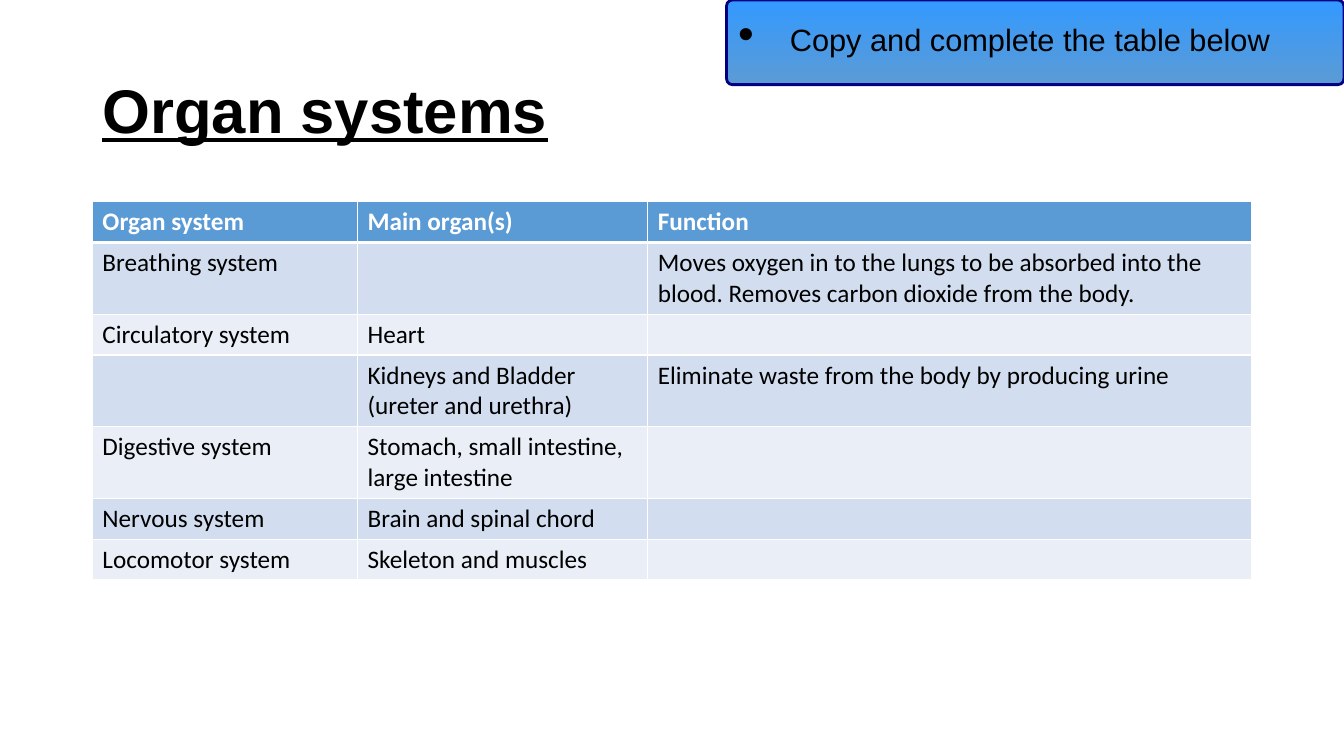
from lxml.etree import SubElement
from pptx import Presentation
from pptx.dml.color import RGBColor
from pptx.enum.shapes import MSO_SHAPE
from pptx.enum.text import MSO_ANCHOR, PP_ALIGN
from pptx.oxml.ns import qn
from pptx.util import Pt

# Content
HEADING = "Organ systems"
TASK = "Copy and complete the table below"
SYSTEMS = [
    ("Organ system", "Main organ(s)", "Function"),
    ("Breathing system", "", "Moves oxygen in to the lungs to be absorbed into the blood. "
                             "Removes carbon dioxide from the body."),
    ("Circulatory system", "Heart", ""),
    ("", "Kidneys and Bladder (ureter and urethra)",
     "Eliminate waste from the body by producing urine"),
    ("Digestive system", "Stomach, small intestine, large intestine", ""),
    ("Nervous system", "Brain and spinal chord", ""),
    ("Locomotor system", "Skeleton and muscles", ""),
]

# Colours
BLACK = RGBColor(0x00, 0x00, 0x00)
WHITE = RGBColor(0xFF, 0xFF, 0xFF)
HEADER_BLUE = RGBColor(0x5B, 0x9B, 0xD5)
BAND_DARK = RGBColor(0xD2, 0xDE, 0xEF)
BAND_LIGHT = RGBColor(0xEA, 0xEF, 0xF7)
TASK_BLUE = RGBColor(0x33, 0x99, 0xFF)
NAVY = RGBColor(0x00, 0x00, 0x80)

# Layout, in points
SLIDE_WIDTH, SLIDE_HEIGHT = 960, 540
MARGIN = 66
COLUMN_WIDTHS = (189.4, 207.4, 431.2)
ROW_HEIGHT = 29.2
TASK_LEFT, TASK_HEIGHT = 519, 60.5
TASK_INDENT = 28

# Text formats
HEADING_FONT = dict(name="Arial", size=Pt(44), bold=True, underline=True)
BULLET_FONT = dict(name="Arial", size=Pt(32), bold=True)
TASK_FONT = dict(name="Arial", size=Pt(22), bold=False)
HEADER_FONT = dict(name="Calibri", size=Pt(18), bold=True)
BODY_FONT = dict(name="Calibri", size=Pt(18), bold=False)


def add_text(paragraph, text, font_format, color=BLACK):
    run = paragraph.add_run()
    run.text = text
    for key, value in font_format.items():
        setattr(run.font, key, value)
    run.font.color.rgb = color


def add_borders(cell, widths):
    properties = cell._tc.get_or_add_tcPr()
    for side, width in widths.items():
        border = SubElement(properties, qn(f"a:ln{side}"), w=str(Pt(width)))
        fill = SubElement(border, qn("a:solidFill"))
        SubElement(fill, qn("a:srgbClr"), val=str(WHITE))


presentation = Presentation()
presentation.slide_width = Pt(SLIDE_WIDTH)
presentation.slide_height = Pt(SLIDE_HEIGHT)
slide = presentation.slides.add_slide(presentation.slide_layouts[5])

# Heading
heading = slide.shapes.title
heading.left, heading.top = Pt(MARGIN), Pt(28.8)
heading.width, heading.height = Pt(sum(COLUMN_WIDTHS)), Pt(104.4)
heading.text_frame.vertical_anchor = MSO_ANCHOR.MIDDLE
heading_line = heading.text_frame.paragraphs[0]
heading_line.alignment = PP_ALIGN.LEFT
heading_line.line_spacing = 0.9
add_text(heading_line, HEADING, HEADING_FONT)

# Table of organ systems
systems = slide.shapes.add_table(
    len(SYSTEMS), len(COLUMN_WIDTHS), Pt(MARGIN), Pt(144),
    Pt(sum(COLUMN_WIDTHS)), Pt(ROW_HEIGHT * len(SYSTEMS))).table
for column, width in zip(systems.columns, COLUMN_WIDTHS):
    column.width = Pt(width)
for row_index, texts in enumerate(SYSTEMS):
    systems.rows[row_index].height = Pt(ROW_HEIGHT)
    is_header = row_index == 0
    band = HEADER_BLUE if is_header else BAND_DARK if row_index % 2 else BAND_LIGHT
    above = 3 if row_index == 1 else 1
    below = 3 if is_header else 1
    for column_index, text in enumerate(texts):
        cell = systems.cell(row_index, column_index)
        add_borders(cell, dict(L=1, R=1, T=above, B=below))
        cell.fill.solid()
        cell.fill.fore_color.rgb = band
        if text:
            add_text(cell.text_frame.paragraphs[0], text,
                     HEADER_FONT if is_header else BODY_FONT,
                     WHITE if is_header else BLACK)

# Task box
task = slide.shapes.add_shape(
    MSO_SHAPE.ROUNDED_RECTANGLE, Pt(TASK_LEFT), Pt(0),
    Pt(SLIDE_WIDTH - TASK_LEFT), Pt(TASK_HEIGHT))
task.adjustments[0] = 0.07
task.shadow.inherit = False
task.fill.gradient()
task.fill.gradient_angle = 270
for stop, color, position in zip(task.fill.gradient_stops, (TASK_BLUE, HEADER_BLUE), (0, 1)):
    stop.color.rgb = color
    stop.position = position
task.line.color.rgb = NAVY
task.line.width = Pt(2)
task.text_frame.word_wrap = True
task.text_frame.vertical_anchor = MSO_ANCHOR.TOP
task_line = task.text_frame.paragraphs[0]
task_line.alignment = PP_ALIGN.LEFT
task_line.space_before = Pt(3)
bullet_properties = task_line._p.get_or_add_pPr()
bullet_properties.set("marL", str(Pt(TASK_INDENT)))
bullet_properties.set("indent", str(-Pt(TASK_INDENT)))
SubElement(bullet_properties, qn("a:buFont"), typeface="Arial")
SubElement(bullet_properties, qn("a:buChar"), char="•")
add_text(task_line, " ", BULLET_FONT)  # its size sets the bullet's size
add_text(task_line, TASK, TASK_FONT)

presentation.save("out.pptx")
